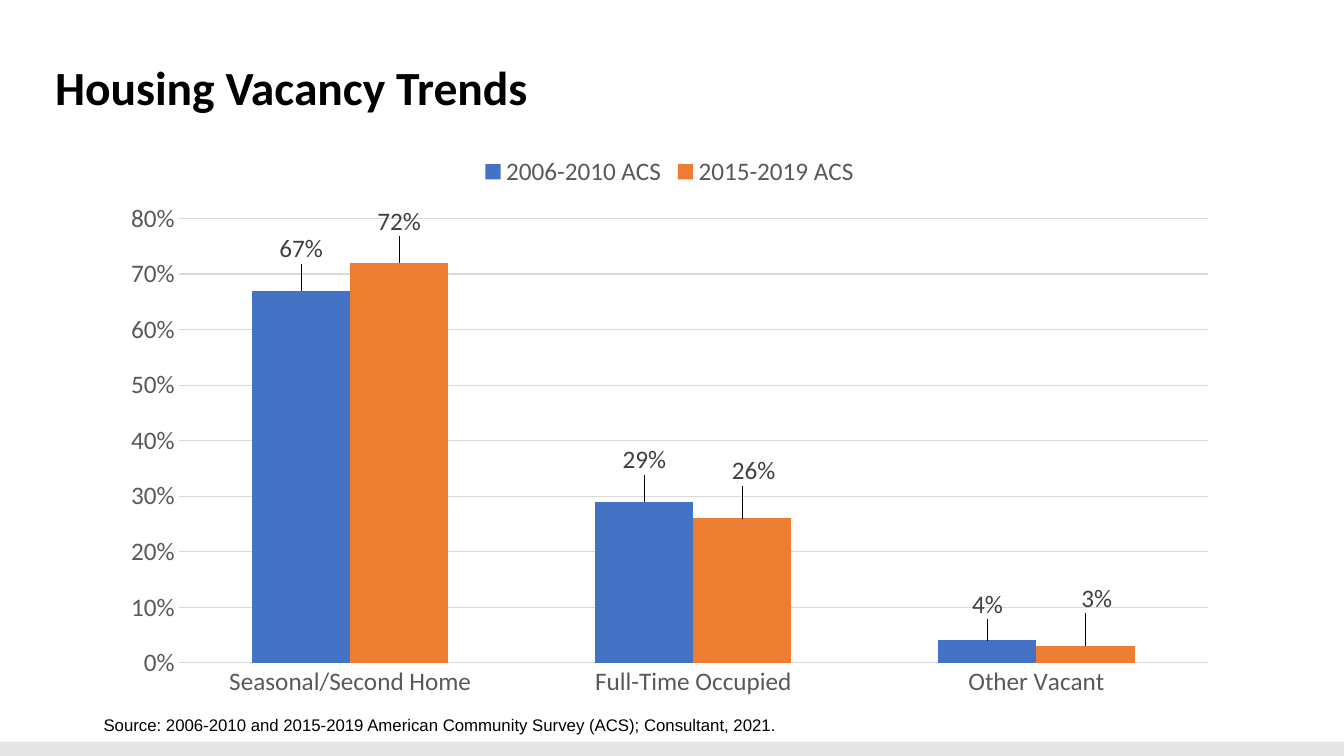
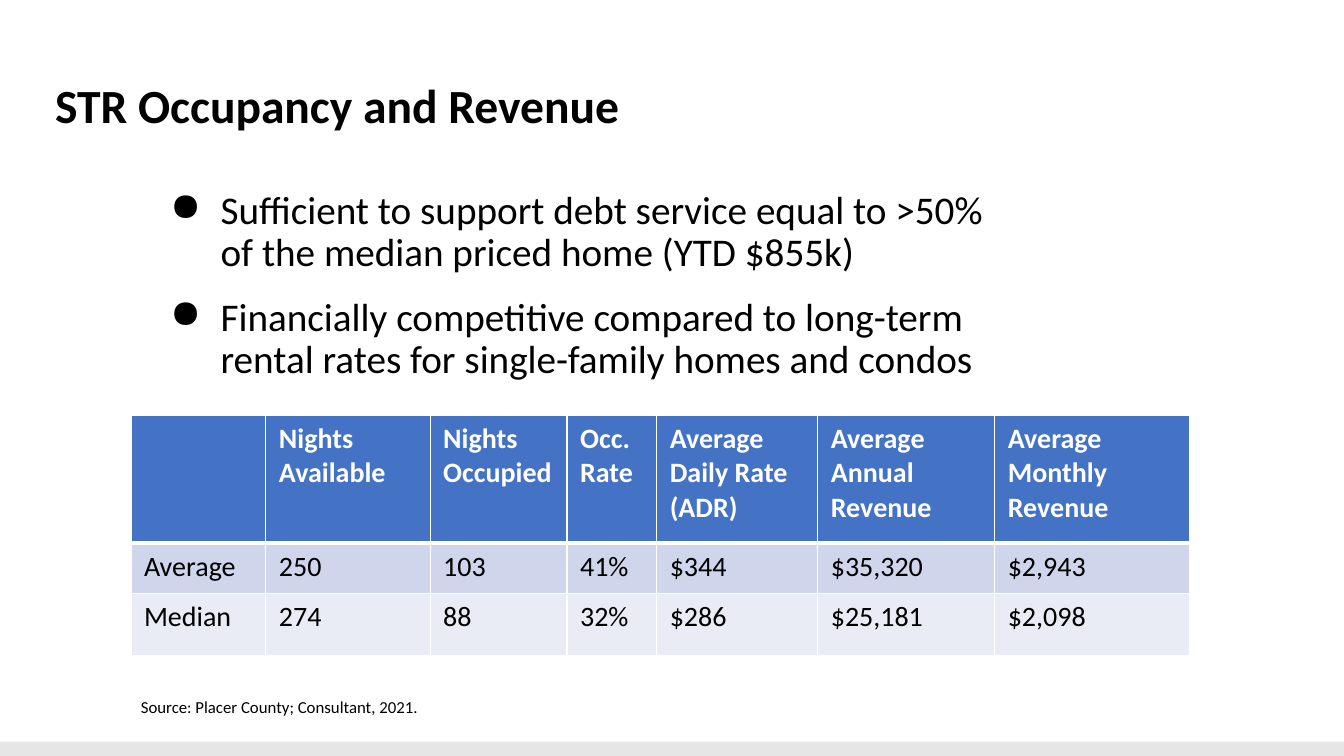
from lxml.etree import SubElement
from pptx import Presentation
from pptx.chart.data import CategoryChartData
from pptx.dml.color import RGBColor
from pptx.enum.chart import XL_CHART_TYPE as ChartType
from pptx.enum.chart import XL_LABEL_POSITION as LabelPos
from pptx.enum.chart import XL_LEGEND_POSITION as LegendPos
from pptx.enum.chart import XL_TICK_MARK as TickMark
from pptx.enum.shapes import MSO_SHAPE as Shape
from pptx.enum.text import MSO_ANCHOR as Anchor
from pptx.enum.text import PP_ALIGN as Align
from pptx.oxml import parse_xml
from pptx.oxml.ns import qn
from pptx.util import Cm, Pt

SLIDE_W, SLIDE_H = 33.87, 19.05
BAND_H = 0.36
TITLE_ONLY = 5
FONT = "Calibri"
BLACK, WHITE = "000000", "FFFFFF"
BLUE, ORANGE = "4472C4", "ED7D31"
BAND_GREY, GRID_GREY = "E7E6E6", "D9D9D9"
AXIS_GREY, LABEL_GREY = "595959", "404040"
ROW_TINTS = ["CFD5EA", "E9EBF5"]


def rgb(hex_code):
    return RGBColor.from_string(hex_code)


def lengths(box):
    return [Cm(value) for value in box]


def style_font(font, size, color, bold=False, name=FONT):
    font.name, font.size, font.bold = name, Pt(size), bold
    font.color.rgb = rgb(color)


def add_bullet(paragraph, indent=1.7, hanging=1.27):
    props = paragraph._p.get_or_add_pPr()
    props.set("marL", str(Cm(indent)))
    props.set("indent", str(-Cm(hanging)))
    SubElement(props, qn("a:buChar")).set("char", "●")


def write(frame, text, size=12, color=BLACK, bold=False, name=FONT,
          spacing=None, after=None, bullet=False, inset=None, anchor=Anchor.TOP):
    """Fill a text frame, one paragraph per line of text."""
    frame.word_wrap = True
    frame.vertical_anchor = anchor
    if inset is not None:
        frame.margin_left = frame.margin_right = Cm(inset)
        frame.margin_top = frame.margin_bottom = Cm(inset)
    frame.text = text
    for paragraph in frame.paragraphs:
        paragraph.alignment = Align.LEFT
        if spacing is not None:
            paragraph.line_spacing = spacing
        if after is not None:
            paragraph.space_after = Pt(after)
        if bullet:
            add_bullet(paragraph)
        for run in paragraph.runs:
            style_font(run.font, size, color, bold, name)


def add_text(slide, box, text, **style):
    write(slide.shapes.add_textbox(*lengths(box)).text_frame, text, **style)


def add_titled_slide(deck, title, title_height):
    slide = deck.slides.add_slide(deck.slide_layouts[TITLE_ONLY])
    band = slide.shapes.add_shape(
        Shape.RECTANGLE, *lengths((0, SLIDE_H - BAND_H, SLIDE_W, BAND_H)))
    band.shadow.inherit = False
    band.fill.solid()
    band.fill.fore_color.rgb = rgb(BAND_GREY)
    band.line.fill.background()

    heading = slide.shapes.title
    heading.left, heading.top, heading.width, heading.height = lengths(
        (1.14, 1.17, 31.55, title_height))
    write(heading.text_frame, title, size=34, bold=True, spacing=0.9,
          inset=0.25, anchor=Anchor.BOTTOM)
    return slide


def label_point(series, index, offset):
    """Label one bar, shifted by fractions of the chart's width and height."""
    label = series.points[index].data_label
    label.position = LabelPos.OUTSIDE_END
    style_font(label.font, 18, LABEL_GREY)
    entry = series._element.findall(".//" + qn("c:dLbl"))[index]
    layout = parse_xml(
        '<c:layout xmlns:c="http://schemas.openxmlformats.org/drawingml/2006/chart">'
        f'<c:manualLayout><c:x val="{offset[0]}"/><c:y val="{offset[1]}"/>'
        '</c:manualLayout></c:layout>')
    entry.find(qn("c:idx")).addnext(layout)


def add_vacancy_chart(slide, box):
    data = CategoryChartData(number_format="0%")
    data.categories = ["Seasonal/Second Home", "Full-Time Occupied", "Other Vacant"]
    data.add_series("2006-2010 ACS", [0.67, 0.29, 0.04])
    data.add_series("2015-2019 ACS", [0.72, 0.26, 0.03])
    chart = slide.shapes.add_chart(
        ChartType.COLUMN_CLUSTERED, *lengths(box), data).chart
    style_font(chart.font, 18, BLACK)
    chart.has_title = False
    chart.has_legend = True
    chart.legend.position = LegendPos.TOP
    chart.legend.include_in_layout = False
    style_font(chart.legend.font, 18, AXIS_GREY)

    for axis in (chart.category_axis, chart.value_axis):
        axis.major_tick_mark = axis.minor_tick_mark = TickMark.NONE
        axis.format.line.fill.background()
        style_font(axis.tick_labels.font, 18, AXIS_GREY)
    shares = chart.value_axis
    shares.minimum_scale, shares.maximum_scale, shares.major_unit = 0, 0.8, 0.1
    shares.tick_labels.number_format = "0%"
    shares.tick_labels.number_format_is_linked = False
    shares.major_gridlines.format.line.color.rgb = rgb(GRID_GREY)
    shares.major_gridlines.format.line.width = Pt(0.75)

    bars = chart.plots[0]
    bars.gap_width, bars.overlap, bars.vary_by_categories = 150, 0, False
    label_offsets = [
        [(0, -0.04), (0, -0.04), (0, -0.03)],
        [(0, -0.04), (0.01, -0.05), (0.01, -0.05)],
    ]
    for series, color, offsets in zip(bars.series, (BLUE, ORANGE), label_offsets):
        series.format.fill.solid()
        series.format.fill.fore_color.rgb = rgb(color)
        for index, offset in enumerate(offsets):
            label_point(series, index, offset)


def set_borders(cell, bottom=1, top=1):
    props = cell._tc.get_or_add_tcPr()
    widths = {"a:lnL": 1, "a:lnR": 1, "a:lnT": top, "a:lnB": bottom}
    for position, (tag, width) in enumerate(widths.items()):
        line = props.makeelement(qn(tag), {"w": str(Pt(width))})
        fill = SubElement(line, qn("a:solidFill"))
        SubElement(fill, qn("a:srgbClr")).set("val", WHITE)
        props.insert(position, line)


def add_revenue_table(slide, left, top):
    rows = [
        ["", "Nights Available", "Nights\nOccupied", "Occ. Rate",
         "Average Daily Rate (ADR)", "Average\nAnnual Revenue",
         "Average\nMonthly Revenue"],
        ["Average", "250", "103", "41%", "$344", "$35,320", "$2,943"],
        ["Median", "274", "88", "32%", "$286", "$25,181", "$2,098"],
    ]
    widths = [3.4, 4.14, 3.45, 2.26, 4.06, 4.46, 4.9]
    heights = [3.22, 1.27, 1.57]
    table = slide.shapes.add_table(
        len(rows), len(widths),
        *lengths((left, top, sum(widths), sum(heights)))).table
    for column, width in zip(table.columns, widths):
        column.width = Cm(width)
    for r, (values, height) in enumerate(zip(rows, heights)):
        table.rows[r].height = Cm(height)
        header = r == 0
        for c, value in enumerate(values):
            cell = table.cell(r, c)
            cell.margin_left = cell.margin_right = Cm(0.33)
            cell.margin_top = cell.margin_bottom = Cm(0.17)
            cell.fill.solid()
            cell.fill.fore_color.rgb = rgb(BLUE if header else ROW_TINTS[r - 1])
            set_borders(cell, bottom=3 if header else 1, top=3 if r == 1 else 1)
            write(cell.text_frame, value, size=20, bold=header,
                  color=WHITE if header else BLACK)


def build_vacancy_slide(deck):
    slide = add_titled_slide(deck, "Housing Vacancy Trends", title_height=2)
    add_text(slide, (2.36, 17.88, 30.25, 0.76),
             "Source: 2006-2010 and 2015-2019 American Community Survey (ACS); "
             "Consultant, 2021.", name="Arial")
    add_vacancy_chart(slide, (2.74, 3.63, 28.27, 14.22))


def build_revenue_slide(deck):
    slide = add_titled_slide(deck, "STR Occupancy and Revenue", title_height=2.46)
    add_revenue_table(slide, 3.3, 10.46)
    add_text(slide, (3.3, 17.42, 30.25, 0.76),
             "Source: Placer County; Consultant, 2021.")
    add_text(slide, (3.61, 4.55, 21.8, 5.5),
             "Sufficient to support debt service equal to >50% "
             "of the median priced home (YTD $855k)\n"
             "Financially competitive compared to long-term "
             "rental rates for single-family homes and condos",
             size=28, spacing=0.9, after=16, bullet=True, inset=0.25)


def main():
    deck = Presentation()
    deck.slide_width, deck.slide_height = Cm(SLIDE_W), Cm(SLIDE_H)
    build_vacancy_slide(deck)
    build_revenue_slide(deck)
    deck.save("out.pptx")


if __name__ == "__main__":
    main()
